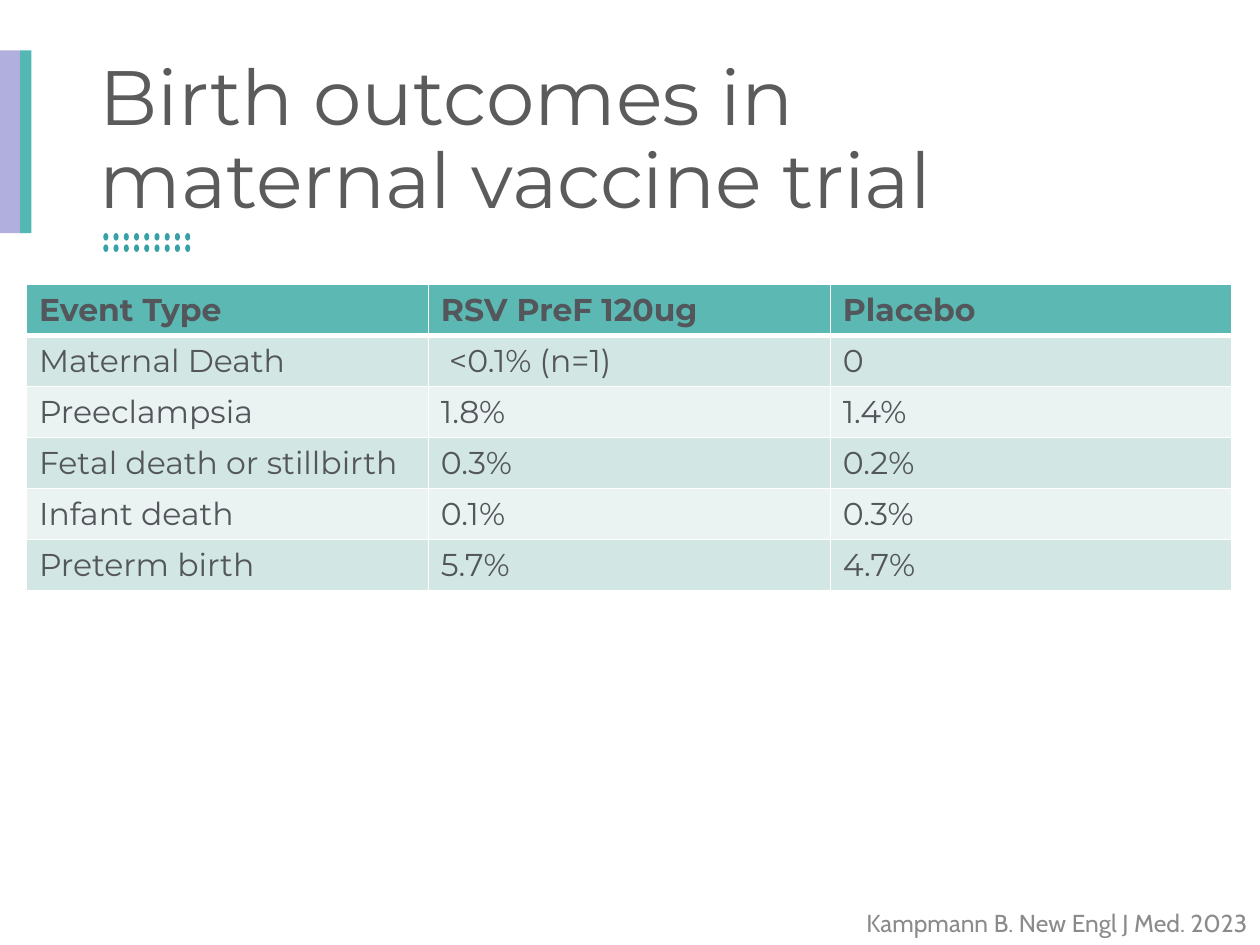
"""Build the slide of birth outcomes in the maternal vaccine trial."""
from dataclasses import dataclass

import lxml.etree
import pptx
import pptx.dml.color
import pptx.enum.shapes
import pptx.enum.text
import pptx.oxml.ns
import pptx.util

Inches = pptx.util.Inches
Pt = pptx.util.Pt
RGBColor = pptx.dml.color.RGBColor
MSO_SHAPE = pptx.enum.shapes.MSO_SHAPE
MSO_ANCHOR = pptx.enum.text.MSO_ANCHOR
PP_ALIGN = pptx.enum.text.PP_ALIGN

WHITE = RGBColor(0xFF, 0xFF, 0xFF)
LILAC = RGBColor(0xB1, 0xAF, 0xDE)
TEAL = RGBColor(0x55, 0xB7, 0xB3)
DOT_TEAL = RGBColor(0x37, 0xA1, 0xA7)
HEADER_TEAL = RGBColor(0x5C, 0xB8, 0xB2)
BAND_DARK = RGBColor(0xD2, 0xE6, 0xE4)
BAND_LIGHT = RGBColor(0xEA, 0xF3, 0xF2)
TITLE_GRAY = RGBColor(0x5B, 0x5B, 0x5B)
CELL_GRAY = RGBColor(0x53, 0x56, 0x5A)
CITATION_GRAY = RGBColor(0x8B, 0x8B, 0x8B)

DOT_COLUMNS = 9
DOT_PITCH_X = 0.65 / (DOT_COLUMNS - 1)
DOT_PITCH_Y = 0.09

OUTCOMES = [
    ("Event Type", "RSV PreF 120ug", "Placebo"),
    ("Maternal Death", " <0.1% (n=1)", "0"),
    ("Preeclampsia", "1.8%", "1.4%"),
    ("Fetal death or stillbirth", "0.3%", "0.2%"),
    ("Infant death", "0.1%", "0.3%"),
    ("Preterm birth", "5.7%", "4.7%"),
]


@dataclass(frozen=True)
class Box:
    left: float
    top: float
    width: float
    height: float

    def lengths(self) -> tuple:
        return tuple(Inches(v) for v in (self.left, self.top, self.width, self.height))


@dataclass(frozen=True)
class Style:
    font: str
    size: float
    color: RGBColor
    bold: bool = False


@dataclass(frozen=True)
class Ornament:
    kind: MSO_SHAPE
    box: Box
    color: RGBColor


@dataclass(frozen=True)
class Caption:
    text: str
    box: Box
    style: Style
    align: PP_ALIGN = PP_ALIGN.LEFT
    anchor: MSO_ANCHOR = MSO_ANCHOR.TOP
    line_spacing: float = 1.0


ORNAMENTS = [
    Ornament(MSO_SHAPE.RECTANGLE, Box(0, 0.4, 0.16, 1.45), LILAC),
    Ornament(MSO_SHAPE.RECTANGLE, Box(0.16, 0.4, 0.09, 1.45), TEAL),
] + [
    Ornament(
        MSO_SHAPE.OVAL,
        Box(0.82 + column * DOT_PITCH_X, 1.85 + row * DOT_PITCH_Y, 0.04, 0.06),
        DOT_TEAL,
    )
    for column in range(DOT_COLUMNS)
    for row in range(2)
]

CAPTIONS = [
    Caption(
        "Birth outcomes in maternal vaccine trial",
        Box(0.69, 0.4, 8.62, 1.45),
        Style("Montserrat", 44, TITLE_GRAY),
        anchor=MSO_ANCHOR.MIDDLE,
        line_spacing=0.9,
    ),
    Caption(
        "Kampmann B. New Engl J Med. 2023",
        Box(5.43, 7.16, 4.57, 0.34),
        Style("Cabin", 14, CITATION_GRAY),
        align=PP_ALIGN.RIGHT,
    ),
]


def apply_style(paragraph, style: Style) -> None:
    for run in paragraph.runs:
        run.font.name = style.font
        run.font.size = Pt(style.size)
        run.font.color.rgb = style.color
        run.font.bold = style.bold


def draw_ornament(slide, ornament: Ornament) -> None:
    shape = slide.shapes.add_shape(ornament.kind, *ornament.box.lengths())
    shape.shadow.inherit = False
    shape.fill.solid()
    shape.fill.fore_color.rgb = ornament.color
    shape.line.fill.background()


def draw_caption(slide, caption: Caption) -> None:
    frame = slide.shapes.add_textbox(*caption.box.lengths()).text_frame
    frame.word_wrap = True
    frame.vertical_anchor = caption.anchor
    frame.text = caption.text
    paragraph = frame.paragraphs[0]
    paragraph.alignment = caption.align
    paragraph.line_spacing = caption.line_spacing
    apply_style(paragraph, caption.style)


def set_borders(cell, widths: dict[str, float], color: RGBColor) -> None:
    qn = pptx.oxml.ns.qn
    properties = cell._tc.get_or_add_tcPr()
    for position, (side, width) in enumerate(widths.items()):
        line = lxml.etree.Element(qn(f"a:ln{side}"), w=str(Pt(width)))
        fill = lxml.etree.SubElement(line, qn("a:solidFill"))
        lxml.etree.SubElement(fill, qn("a:srgbClr"), val=str(color))
        properties.insert(position, line)


def draw_outcomes(slide, rows: list[tuple[str, ...]], box: Box) -> None:
    table = slide.shapes.add_table(len(rows), len(rows[0]), *box.lengths()).table
    for r, row in enumerate(rows):
        header = r == 0
        band = HEADER_TEAL if header else (BAND_DARK if r % 2 else BAND_LIGHT)
        style = Style("Montserrat", 18, CELL_GRAY, bold=header)
        widths = {"L": 1, "R": 1, "T": 3 if r == 1 else 1, "B": 3 if header else 1}
        for c, text in enumerate(row):
            cell = table.cell(r, c)
            cell.text_frame.text = text
            apply_style(cell.text_frame.paragraphs[0], style)
            cell.fill.solid()
            cell.fill.fore_color.rgb = band
            set_borders(cell, widths, WHITE)


def main() -> None:
    deck = pptx.Presentation()
    deck.slide_width = Inches(10)
    deck.slide_height = Inches(7.5)
    slide = deck.slides.add_slide(deck.slide_layouts[6])
    for ornament in ORNAMENTS:
        draw_ornament(slide, ornament)
    for caption in CAPTIONS:
        draw_caption(slide, caption)
    draw_outcomes(slide, OUTCOMES, Box(0.21, 2.26, 9.57, 2.43))
    deck.save("out.pptx")


if __name__ == "__main__":
    main()
